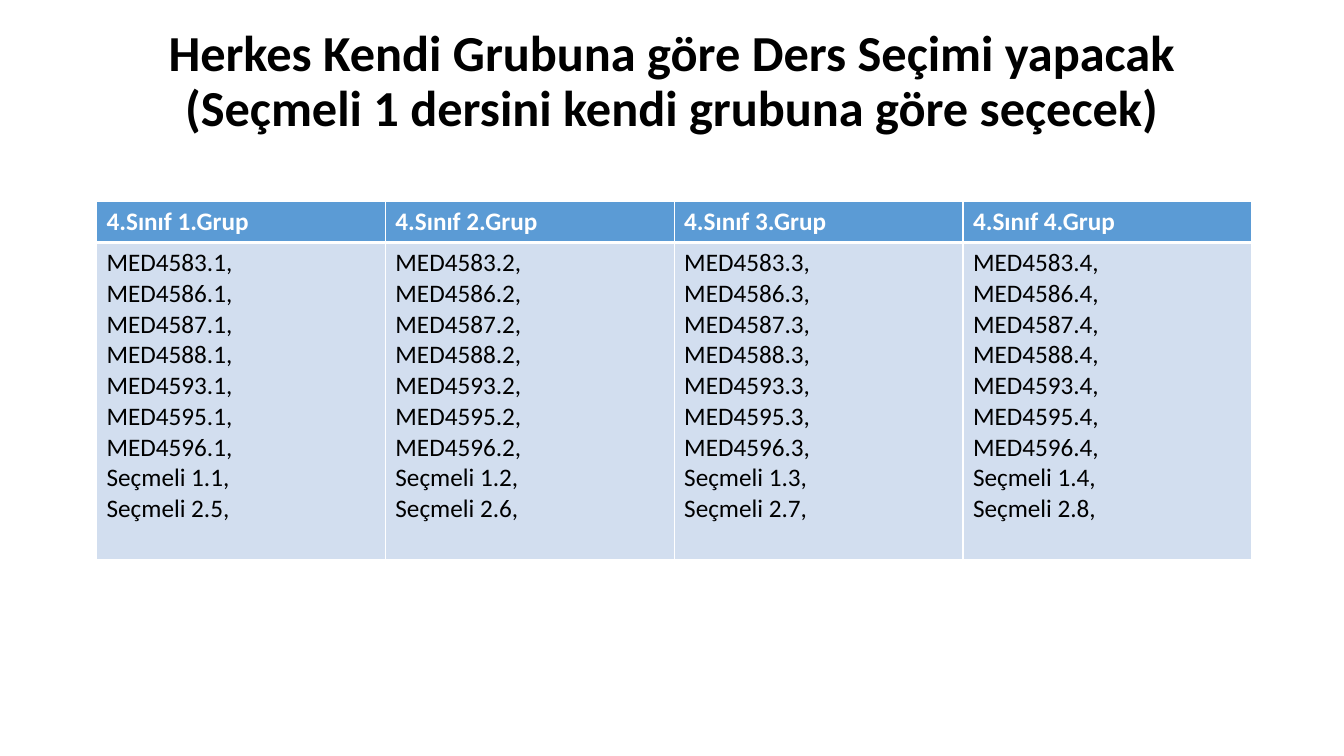
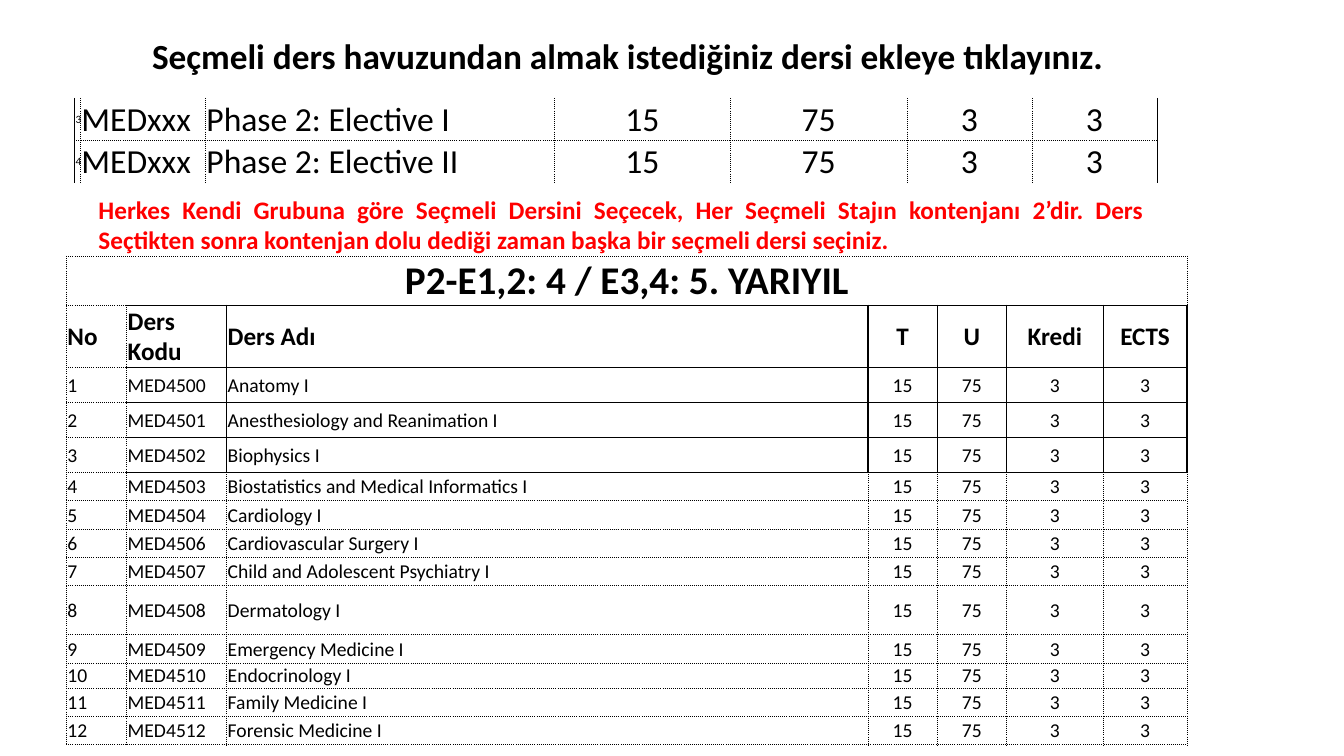
from dataclasses import dataclass
from typing import Callable, NamedTuple, Optional

import lxml.etree
import pptx
import pptx.dml.color
import pptx.enum.text
import pptx.oxml.ns
import pptx.util

Pt = pptx.util.Pt
Align = pptx.enum.text.PP_ALIGN
Anchor = pptx.enum.text.MSO_ANCHOR
FACE = "Calibri"
BLACK, WHITE, RED = "000000", "FFFFFF", "FF0000"
BLUE, PALE = "5B9BD5", "D2DEEF"


class Box(NamedTuple):
    left: float
    top: float
    width: float
    height: float


class Font(NamedTuple):
    size: float
    bold: bool = False
    tint: str = BLACK


class Line(NamedTuple):
    tint: str
    width: float
    dash: str = "solid"


@dataclass
class Cell:
    lines: list[str]
    font: Font
    align: Align = Align.LEFT
    fill: Optional[str] = None


@dataclass
class Grid:
    left: float
    top: float
    cols: list[float]
    rows: list[float]
    cells: list[list[Cell]]
    across: Callable[[int, int], Optional[Line]]
    down: Callable[[int, int], Optional[Line]]
    tight: bool = True


DOT = Line(BLACK, 0.5, "sysDot")
THIN = Line(BLACK, 0.5)
SOLID = Line(BLACK, 1)
HEAD = Font(18, True)
BODY = Font(14)

CODES = [4583, 4586, 4587, 4588, 4593, 4595, 4596]
COURSES = [
    ("MED4500", "Anatomy I"),
    ("MED4501", "Anesthesiology and Reanimation I"),
    ("MED4502", "Biophysics I"),
    ("MED4503", "Biostatistics and Medical Informatics I"),
    ("MED4504", "Cardiology I"),
    ("MED4506", "Cardiovascular Surgery I"),
    ("MED4507", "Child and Adolescent Psychiatry I"),
    ("MED4508", "Dermatology I"),
    ("MED4509", "Emergency Medicine I"),
    ("MED4510", "Endocrinology I"),
    ("MED4511", "Family Medicine I"),
    ("MED4512", "Forensic Medicine I"),
]
HOURS = ["15", "75", "3", "3"]


def paint(tint: str) -> pptx.dml.color.RGBColor:
    return pptx.dml.color.RGBColor.from_string(tint)


def write(frame, lines: list[str], font: Font, align: Align, space: float = 1) -> None:
    frame.word_wrap = True
    for i, line in enumerate(lines):
        para = frame.paragraphs[0] if i == 0 else frame.add_paragraph()
        para.alignment = align
        para.line_spacing = space
        for j, part in enumerate(line.split("\n")):
            if j:
                para.add_line_break()
            run = para.add_run()
            run.text = part
            run.font.name = FACE
            run.font.size = Pt(font.size)
            run.font.bold = font.bold
            run.font.color.rgb = paint(font.tint)


def head(slide, text: str, box: Box, font: Font, align: Align, inset: float = 7.2) -> None:
    title = slide.shapes.title
    title.left, title.top, title.width, title.height = map(Pt, box)
    frame = title.text_frame
    frame.auto_size = pptx.enum.text.MSO_AUTO_SIZE.NONE
    frame.vertical_anchor = Anchor.MIDDLE
    frame.margin_left = Pt(inset)
    write(frame, [text], font, align, 0.9)


def edge(cell, side: str, line: Optional[Line]) -> None:
    name = pptx.oxml.ns.qn
    make = lxml.etree.SubElement
    props = cell._tc.get_or_add_tcPr()
    mark = make(props, name(f"a:ln{side}"))
    if line is None:
        make(mark, name("a:noFill"))
        return
    mark.set("w", str(int(Pt(line.width))))
    fill = make(mark, name("a:solidFill"))
    make(fill, name("a:srgbClr")).set("val", line.tint)
    make(mark, name("a:prstDash")).set("val", line.dash)


def draw(slide, grid: Grid):
    frame = slide.shapes.add_table(
        len(grid.rows), len(grid.cols), Pt(grid.left), Pt(grid.top),
        Pt(sum(grid.cols)), Pt(sum(grid.rows)))
    table = frame.table
    table.first_row = table.horz_banding = False
    for col, width in zip(table.columns, grid.cols):
        col.width = Pt(width)
    for row, height in zip(table.rows, grid.rows):
        row.height = Pt(height)
    for r in range(len(grid.rows)):
        for c in range(len(grid.cols)):
            cell = table.cell(r, c)
            if grid.tight:
                cell.margin_left = cell.margin_right = cell.margin_top = Pt(0.7)
                cell.margin_bottom = Pt(0)
                cell.vertical_anchor = Anchor.MIDDLE
            edge(cell, "L", grid.down(r, c))
            edge(cell, "R", grid.down(r, c + 1))
            edge(cell, "T", grid.across(r, c))
            edge(cell, "B", grid.across(r + 1, c))
            item = grid.cells[r][c] if c < len(grid.cells[r]) else None
            if item and item.fill:
                cell.fill.solid()
                cell.fill.fore_color.rgb = paint(item.fill)
            else:
                cell.fill.background()
            if item:
                write(cell.text_frame, item.lines, item.font, item.align)
    return table


def record(texts: list[str], font: Font) -> list[Cell]:
    return [Cell([text], font, Align.CENTER if i > 2 else Align.LEFT)
            for i, text in enumerate(texts)]


def groups(slide) -> None:
    head(slide, "Herkes Kendi Grubuna göre Ders Seçimi yapacak\n"
         "(Seçmeli 1 dersini kendi grubuna göre seçecek)",
         Box(66, 15, 828, 88), Font(36, True), Align.CENTER)
    nums = range(1, 5)
    tops = [Cell([f"4.Sınıf {n}.Grup"], Font(18, True, WHITE), fill=BLUE) for n in nums]
    lists = [Cell([f"MED{code}.{n}," for code in CODES]
                  + [f"Seçmeli 1.{n},", f"Seçmeli 2.{n + 4},"], Font(18), fill=PALE)
             for n in nums]
    draw(slide, Grid(
        69, 144, [206.3] * 4, [29.2, 226.8], [tops, lists],
        across=lambda i, c: Line(WHITE, 3 if i == 1 else 1),
        down=lambda r, j: Line(WHITE, 1),
        tight=False))


def pool(slide) -> None:
    head(slide, "Seçmeli ders havuzundan almak istediğiniz dersi ekleye tıklayınız.",
         Box(66, 17, 828, 49), Font(25.2, True), Align.LEFT, 42.6)
    cells = [[Cell(["P2-E1,2: 4 / E3,4: 5. YARIYIL"], Font(28, True), Align.CENTER)],
             record(["No", "Ders Kodu", "Ders Adı", "T", "U", "Kredi", "ECTS"], HEAD)]
    cells += [record([str(n), code, name, *HOURS], BODY)
              for n, (code, name) in enumerate(COURSES, 1)]
    table = draw(slide, Grid(
        47.5, 183, [43, 71.5, 458, 49.5, 49.5, 69, 60],
        [34.6, 44.7, 25, 25, 25] + [20.2] * 4 + [35.2, 20.2, 18, 20.2, 20.2], cells,
        across=lambda i, c: SOLID if c > 0 and 1 <= i <= 5 else DOT,
        down=lambda r, j: SOLID if j > 1 and 1 <= r <= 4 else DOT))
    table.cell(0, 0).merge(table.cell(0, 6))

    slots = [record([num, "MEDxxx", f"Phase 2: Elective {mark}", *HOURS], Font(24))
             for num, mark in (("3", "I"), ("4", "II"))]
    for slot in slots:
        slot[0].font = Font(8)
    draw(slide, Grid(
        53.3, 70, [4, 89.3, 249, 126, 126, 89.3, 89.3], [30.2] * 2, slots,
        across=lambda i, c: DOT if i == 1 else None,
        down=lambda r, j: THIN if j in (0, 7) else DOT))

    note = slide.shapes.add_textbox(*map(Pt, Box(63.3, 135.4, 761, 51)))
    write(note.text_frame,
          ["Herkes Kendi Grubuna göre Seçmeli Dersini Seçecek, Her Seçmeli Stajın "
           "kontenjanı 2’dir. Ders Seçtikten sonra kontenjan dolu dediği zaman başka "
           "bir seçmeli dersi seçiniz."], Font(18, True, RED), Align.JUSTIFY)


def main() -> None:
    deck = pptx.Presentation()
    deck.slide_width, deck.slide_height = Pt(960), Pt(540)
    for build in (groups, pool):
        build(deck.slides.add_slide(deck.slide_layouts[5]))
    deck.save("out.pptx")


if __name__ == "__main__":
    main()
